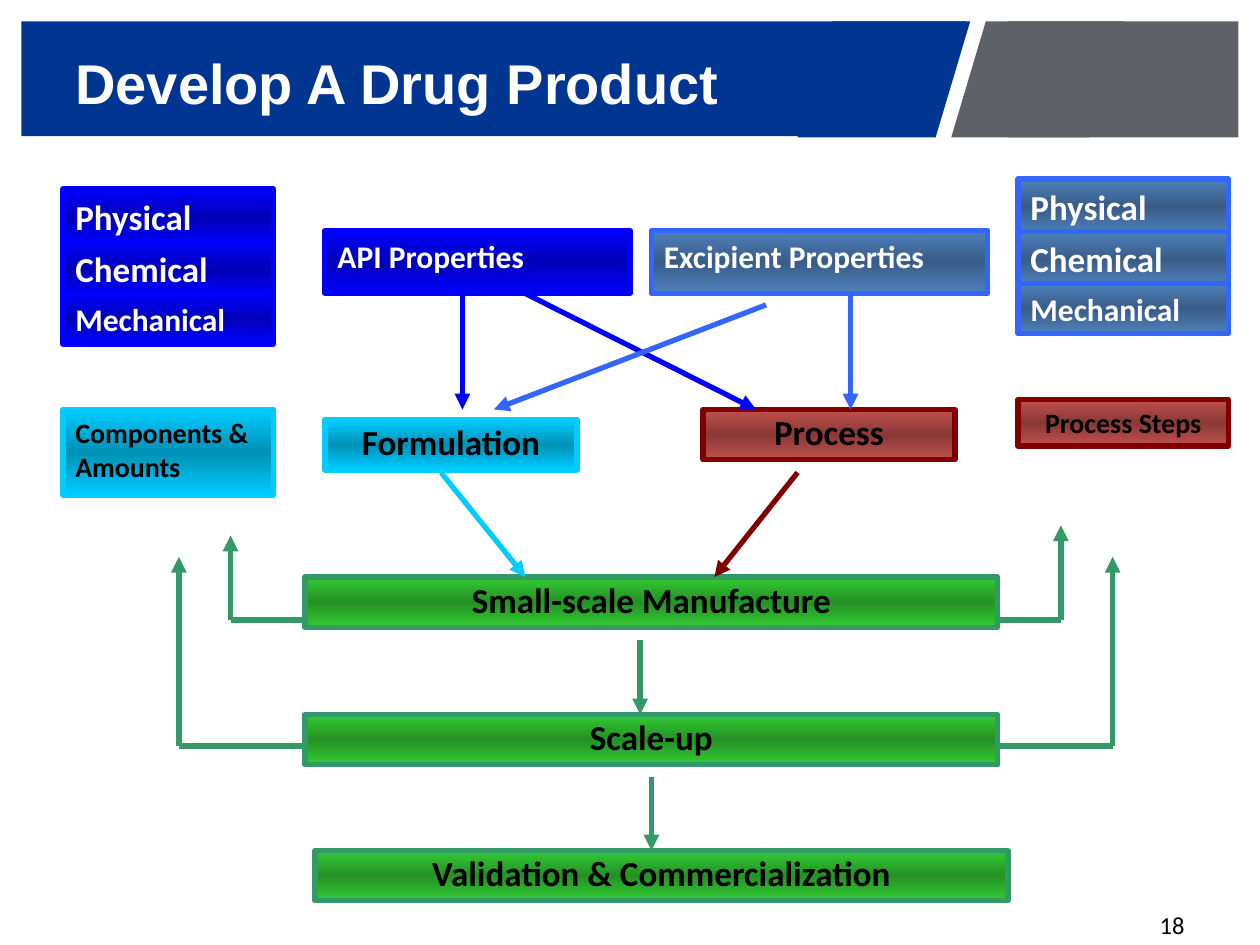
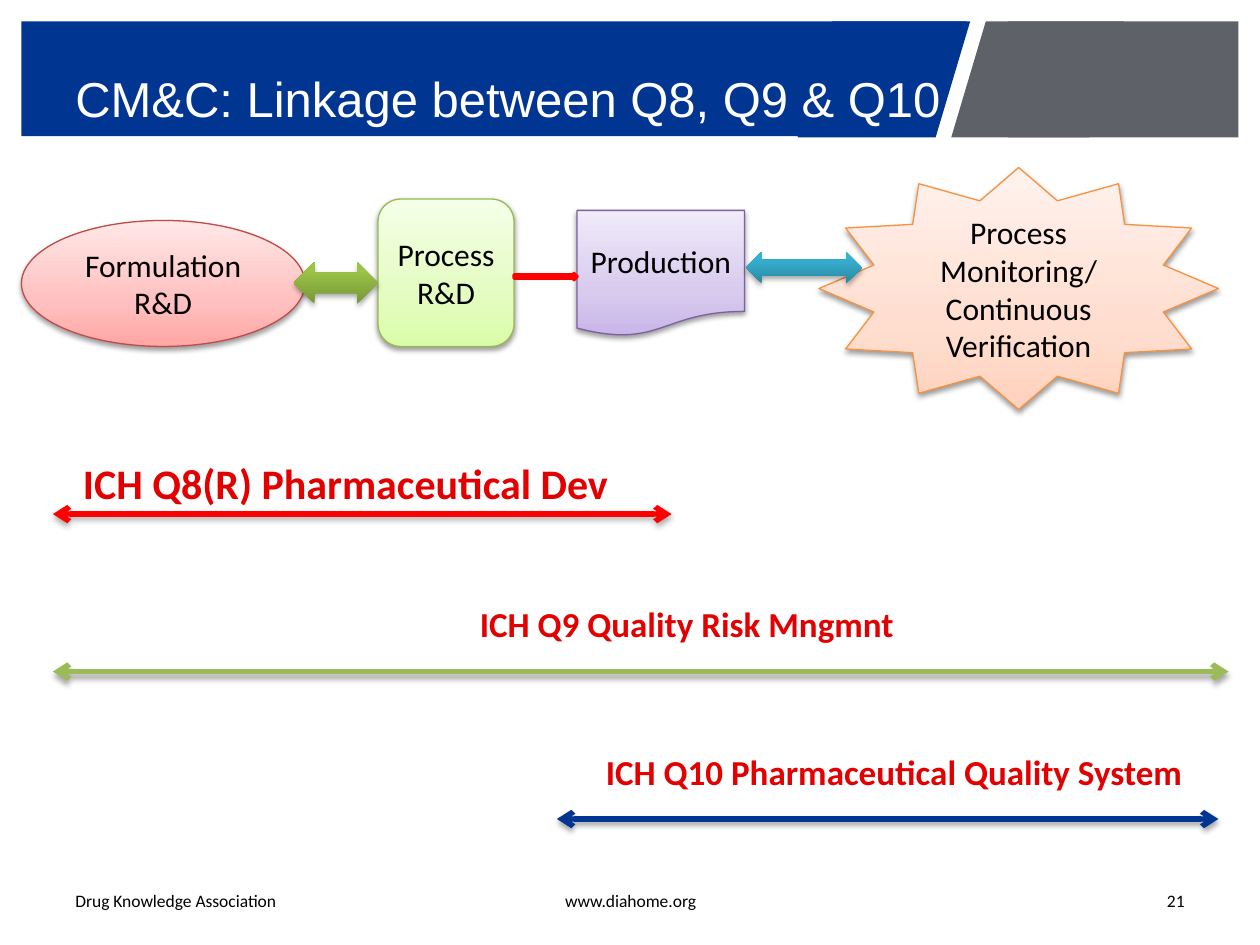
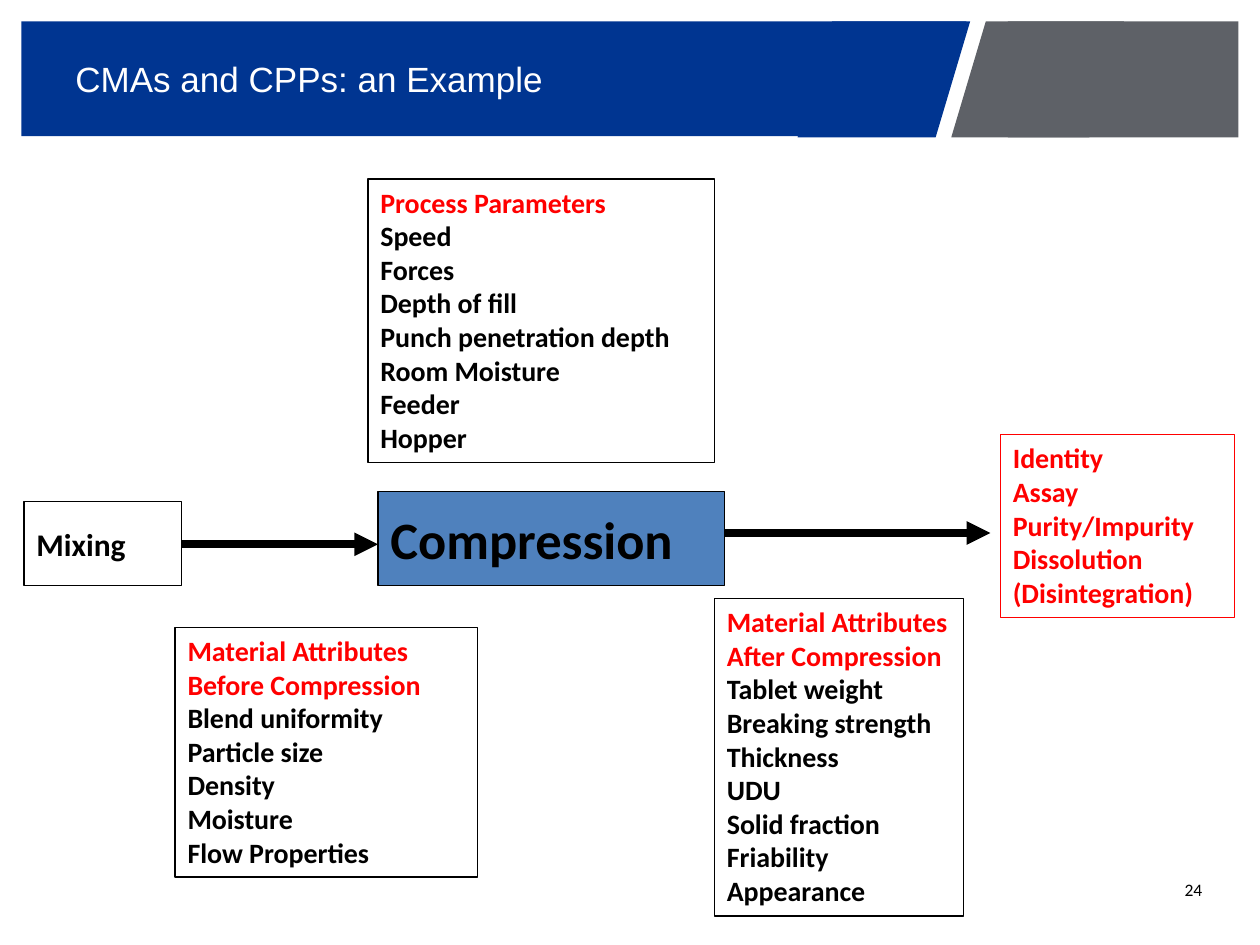
import pptx
import pptx.dml.color
import pptx.enum.shapes
import pptx.enum.text
import pptx.oxml.ns
import pptx.util
from lxml import etree

RGB = pptx.dml.color.RGBColor
Inches = pptx.util.Inches
Pt = pptx.util.Pt
qn = pptx.oxml.ns.qn
FORM = pptx.enum.shapes.MSO_SHAPE
ALIGN = pptx.enum.text.PP_ALIGN
ANCHOR = pptx.enum.text.MSO_ANCHOR

WHITE = RGB(0xFF, 0xFF, 0xFF)
BLACK = RGB(0, 0, 0)
NAVY = RGB(0x00, 0x35, 0x91)
GREY = RGB(0x5E, 0x61, 0x67)
RED = RGB(0xFF, 0, 0)
CRIMSON = RGB(0xE2, 0, 0)
BLUE = RGB(0, 0, 0xFF)
STEEL = RGB(0x4F, 0x81, 0xBD)
SKY = RGB(0x33, 0x66, 0xFF)
CYAN = RGB(0x00, 0xCC, 0xFF)
BRICK = RGB(0xC0, 0x50, 0x4D)
MAROON = RGB(0x80, 0, 0)
GREEN = RGB(0x33, 0xCC, 0x33)
FERN = RGB(0x33, 0x99, 0x66)
OLIVE = RGB(0x9B, 0xBB, 0x59)

ROSE_EDGE = RGB(0xBF, 0x4C, 0x48)
LIME_EDGE = RGB(0x98, 0xB9, 0x55)
PEACH_EDGE = RGB(0xF6, 0x92, 0x40)
LILAC_EDGE = RGB(0x7D, 0x60, 0xA0)
ROSE = [(0, RGB(0xFF, 0xA6, 0xA5)), (35, RGB(0xFF, 0xC0, 0xBF)), (100, RGB(0xFF, 0xE7, 0xE7))]
LIME = [(0, RGB(0xDA, 0xFD, 0xA7)), (35, RGB(0xE4, 0xFC, 0xC2)), (100, RGB(0xF5, 0xFF, 0xE7))]
PEACH = [(0, RGB(0xFF, 0xD2, 0xBD)), (35, RGB(0xFF, 0xDE, 0xD0)), (100, RGB(0xFF, 0xF2, 0xED))]
LILAC = [(0, RGB(0xC9, 0xB5, 0xE8)), (35, RGB(0xD8, 0xCB, 0xEE)), (100, RGB(0xF0, 0xEA, 0xF9))]
TEAL = [(0, RGB(0x2A, 0x88, 0xA2)), (80, RGB(0x37, 0xB1, 0xD2)), (100, RGB(0x34, 0xB4, 0xD6))]
MOSS = [(0, RGB(0x77, 0x97, 0x37)), (80, RGB(0x9B, 0xC3, 0x48)), (100, RGB(0x9D, 0xC7, 0x46))]


def node(up, tag, **attrs):
    """Add a child element with the given attributes."""
    return etree.SubElement(up, qn(tag), {k: str(v) for k, v in attrs.items()})


def blend(shape, stops, angle):
    """Fill with a gradient; a third item in a stop is its shade in percent."""
    shape.fill.background()
    grad = etree.Element(qn("a:gradFill"), rotWithShape="1")
    row = node(grad, "a:gsLst")
    for pos, color, *shade in stops:
        stop = node(row, "a:gs", pos=pos * 1000)
        tint = node(stop, "a:srgbClr", val=color)
        for part in shade:
            node(tint, "a:shade", val=int(part * 1000))
    node(grad, "a:lin", ang=angle * 60000, scaled=1)
    props = shape.element.spPr
    props.replace(props.find(qn("a:noFill")), grad)


def shade(effects, alpha, dist):
    """Put a soft black shadow below the element."""
    drop = node(effects, "a:outerShdw", blurRad=Pt(3.1), dist=Pt(dist),
                dir=90 * 60000, rotWithShape=0)
    node(node(drop, "a:srgbClr", val=BLACK), "a:alpha", val=alpha * 1000)


def write(shape, lines, size, color=BLACK, bold=False, align=ALIGN.LEFT,
          anchor=ANCHOR.TOP, font="Calibri", wrap=True, space=None):
    """Fill a shape with lines, each a string or a (string, colour) pair."""
    frame = shape.text_frame
    frame.word_wrap = wrap
    frame.vertical_anchor = anchor
    for i, line in enumerate(lines):
        text, ink = (line, color) if isinstance(line, str) else line
        para = frame.paragraphs[0] if i == 0 else frame.add_paragraph()
        para.alignment = align
        if space:
            para.line_spacing = space
        run = para.add_run()
        run.text = text
        run.font.name = font
        run.font.size = Pt(size)
        run.font.bold = bold
        run.font.color.rgb = ink


def label(slide, at, text, size, **style):
    box = slide.shapes.add_textbox(*map(Inches, at))
    write(box, [text], size, anchor=ANCHOR.MIDDLE, **style)


def block(slide, form, at, fill=None, edge=None, width=0.75):
    """Add a preset shape with a plain fill or none."""
    shape = slide.shapes.add_shape(form, *map(Inches, at))
    if fill is None:
        shape.fill.background()
    else:
        shape.fill.solid()
        shape.fill.fore_color.rgb = fill
    if edge is None:
        shape.line.fill.background()
    else:
        shape.line.color.rgb = edge
        shape.line.width = Pt(width)
    shape.shadow.inherit = False
    return shape


def bar(slide, at, text, size, fill, edge, color=BLACK, align=ALIGN.LEFT, space=None):
    """Add a step of the flow, dark across its middle."""
    shape = block(slide, FORM.RECTANGLE, at, fill, edge, 3)
    blend(shape, [(0, fill), (50, fill, 46.27), (100, fill)], 90)
    write(shape, [text], size, color, True, align, space=space)


def glossy(slide, form, at, stops, edge=None, lines=()):
    """Add a shape with a gradient from the bottom and a shadow."""
    shape = block(slide, form, at, edge=edge)
    blend(shape, stops, 270)
    alpha, dist = (38, 1.6) if edge else (35, 1.8)
    shade(shape.element.spPr.find(qn("a:effectLst")), alpha, dist)
    write(shape, lines, 18, align=ALIGN.CENTER, anchor=ANCHOR.MIDDLE)


def arrow(slide, start, end, color, width=3, head=None, tail="triangle", lift=False):
    kind = pptx.enum.shapes.MSO_CONNECTOR.STRAIGHT
    line = slide.shapes.add_connector(kind, *map(Inches, start + end))
    line.line.color.rgb = color
    line.line.width = Pt(width)
    props = line.element.spPr
    stroke = props.find(qn("a:ln"))
    if head:
        node(stroke, "a:headEnd", type=head)
    if tail:
        node(stroke, "a:tailEnd", type=tail)
    effects = node(props, "a:effectLst")
    if lift:
        shade(effects, 35, 1.8)


def start(deck, title, at, size, bold=False):
    """Add a slide with the title band."""
    slide = deck.slides.add_slide(deck.slide_layouts[6])
    top, low = 0.17, 1.08
    pen = slide.shapes.build_freeform(Inches(0.17), Inches(top))
    pen.add_line_segments([(Inches(x), Inches(y)) for x, y in
                           [(0.17, low), (7.4, low), (7.67, top)]])
    band = pen.convert_to_shape()
    band.fill.solid()
    band.fill.fore_color.rgb = NAVY
    band.line.fill.background()
    band.shadow.inherit = False
    for form, left, width, color in [
            (FORM.FLOWCHART_DATA, 6.33, 1.37, NAVY),
            (FORM.RECTANGLE, 8, 1.83, GREY),
            (FORM.FLOWCHART_DATA, 7.55, 1.37, GREY)]:
        block(slide, form, (left, top, width, 0.92), color)
    label(slide, at, title, size, color=WHITE, bold=bold, font="Arial")
    return slide


def develop(deck):
    slide = start(deck, "Develop A Drug Product", (0.5, 0.3, 6.67, 0.7), 32, True)
    label(slide, (8.78, 7.2, 0.72, 0.28), "18", 14, align=ALIGN.RIGHT)

    mid = {"align": ALIGN.CENTER, "space": 0.9}
    bar(slide, (2.58, 3.33, 2, 0.4), "Formulation", 20, CYAN, CYAN, **mid)
    bar(slide, (0.5, 3.25, 1.67, 0.68), "Components & Amounts", 16, CYAN, CYAN)
    for fill, edge, left, width, name, side, top in [
            (BLUE, BLUE, 2.58, 2.42, "API Properties", 0.5, 1.5),
            (STEEL, SKY, 5.17, 2.67, "Excipient Properties", 8.08, 1.42)]:
        bar(slide, (left, 1.83, width, 0.5), name, 18, fill, edge, WHITE)
        for i, (kind, size, tall) in enumerate([
                ("Physical", 20, 0.44), ("Chemical", 20, 0.44), ("Mechanical", 18, 0.4)]):
            bar(slide, (side, top + i * 0.415, 1.67, tall), kind, size, fill, edge, WHITE)
    bar(slide, (8.08, 3.17, 1.67, 0.37), "Process Steps", 16, BRICK, MAROON,
        align=ALIGN.CENTER)
    bar(slide, (5.58, 3.25, 2, 0.4), "Process", 20, BRICK, MAROON, **mid)
    for left, top, stage in [(2.42, 4.58, "Small-scale Manufacture"),
                             (2.42, 5.67, "Scale-up"),
                             (2.5, 6.75, "Validation & Commercialization")]:
        bar(slide, (left, top, 5.5, 0.4), stage, 20, GREEN, FERN, **mid)

    for begin, end, color in [
            ((6.33, 3.75), (5.67, 4.58), MAROON),
            ((3.5, 3.75), (4.17, 4.58), CYAN),
            ((5.08, 5.08), (5.08, 5.67), FERN),
            ((5.17, 6.17), (5.17, 6.75), FERN),
            ((4.17, 2.33), (6, 3.25), BLUE),
            ((3.67, 2.33), (3.67, 3.25), BLUE),
            ((6.75, 2.33), (6.75, 3.25), SKY),
            ((6.08, 2.42), (3.92, 3.25), SKY)]:
        arrow(slide, begin, end, color)
    for edge, turn, low, high in [(7.92, 8.83, 5.92, 4.42), (7.92, 8.42, 4.92, 4.17),
                                  (2.42, 1.83, 4.92, 4.25), (2.42, 1.42, 5.92, 4.42)]:
        arrow(slide, (edge, low), (turn, low), FERN, tail=None)
        arrow(slide, (turn, low), (turn, high), FERN)


def linkage(deck):
    slide = start(deck, "CM&C: Linkage between Q8, Q9 & Q10", (0.5, 0.47, 7.25, 0.62), 28)
    for left, width, text, align in [
            (7.17, 2.33, "21", ALIGN.RIGHT),
            (3.42, 3.17, "www.diahome.org", ALIGN.CENTER),
            (0.5, 2.33, "Drug Knowledge Association", ALIGN.LEFT)]:
        label(slide, (left, 6.95, width, 0.4), text, 10, align=align)

    glossy(slide, FORM.OVAL, (0.17, 1.75, 2.25, 1), ROSE, ROSE_EDGE,
           ["Formulation", "R&D"])
    glossy(slide, FORM.ROUNDED_RECTANGLE, (3, 1.58, 1.08, 1.17), LIME, LIME_EDGE,
           ["Process", "R&D"])
    glossy(slide, FORM.STAR_12_POINT, (6.5, 1.33, 3.17, 1.92), PEACH, PEACH_EDGE,
           ["Process Monitoring/", "Continuous Verification"])
    glossy(slide, FORM.FLOWCHART_DOCUMENT, (4.58, 1.67, 1.33, 1), LILAC, LILAC_EDGE,
           ["Production"])

    body = slide.shapes.add_textbox(*map(Inches, (0.33, 3.58, 9.67, 3.17)))
    write(body, ["ICH Q8(R) Pharmaceutical Dev", "ICH Q9 Quality Risk Mngmnt",
                 "ICH Q10 Pharmaceutical Quality System"], 20, CRIMSON, True)
    first, *rest = body.text_frame.paragraphs
    first.runs[0].font.size = Pt(24)
    for para, gap in zip(rest, (54, 61)):
        para.space_before = Pt(gap)
    for para, left in zip(body.text_frame.paragraphs, (0.23, 3.38, 4.38)):
        para._p.get_or_add_pPr().set("marL", str(Inches(left)))

    for left, right, y, color in [(0.42, 5.33, 4.08, RED), (0.42, 9.75, 5.33, OLIVE),
                                  (4.42, 9.67, 6.5, NAVY)]:
        arrow(slide, (left, y), (right, y), color, head="arrow", tail="arrow", lift=True)
    block(slide, FORM.RIGHT_ARROW, (4.08, 2.17, 0.5, 0.05), STEEL, RED, 2)
    glossy(slide, FORM.LEFT_RIGHT_ARROW, (5.92, 2, 0.92, 0.25), TEAL)
    glossy(slide, FORM.LEFT_RIGHT_ARROW, (2.33, 2.08, 0.67, 0.33), MOSS)


def panel(slide, at, heads, items=(), edge=BLACK, wrap=False):
    """Add a framed list with red heads."""
    shape = block(slide, FORM.RECTANGLE, at, edge=edge)
    write(shape, [(head, RED) for head in heads] + list(items), 16, bold=True, wrap=wrap)


def example(deck):
    slide = start(deck, "CMAs and CPPs: an Example", (0.5, 0, 9, 1.25), 20)
    label(slide, (8.92, 6.92, 0.72, 0.28), "24", 10, align=ALIGN.RIGHT)
    for at, text, size, fill in [((0.19, 3.98, 1.25, 0.67), "Mixing", 18, None),
                                 ((3, 3.9, 2.75, 0.75), "Compression", 30, STEEL)]:
        step = block(slide, FORM.RECTANGLE, at, fill, BLACK)
        write(step, [text], size, bold=True, anchor=ANCHOR.MIDDLE, wrap=False)
    arrow(slide, (1.44, 4.32), (3, 4.32), BLACK, 4.5)
    panel(slide, (1.39, 4.98, 2.4, 1.98), ["Material Attributes", "Before Compression"],
          ["Blend uniformity", "Particle size", "Density", "Moisture", "Flow Properties"])
    panel(slide, (2.92, 1.42, 2.75, 2.25), ["Process Parameters"],
          ["Speed", "Forces", "Depth of fill", "Punch penetration depth",
           "Room Moisture", "Feeder", "Hopper"], wrap=True)
    arrow(slide, (5.75, 4.23), (7.86, 4.23), BLACK, 4.5)
    panel(slide, (5.67, 4.75, 1.98, 2.52), ["Material Attributes", "After Compression"],
          ["Tablet weight", "Breaking strength", "Thickness", "UDU",
           "Solid fraction", "Friability", "Appearance"])
    panel(slide, (7.94, 3.45, 1.86, 1.45), ["Identity", "Assay", "Purity/Impurity",
                                            "Dissolution", "(Disintegration)"], edge=RED)


def main():
    deck = pptx.Presentation()
    deck.slide_width = Inches(10)
    deck.slide_height = Inches(7.5)
    develop(deck)
    linkage(deck)
    example(deck)
    deck.save("out.pptx")


if __name__ == "__main__":
    main()
